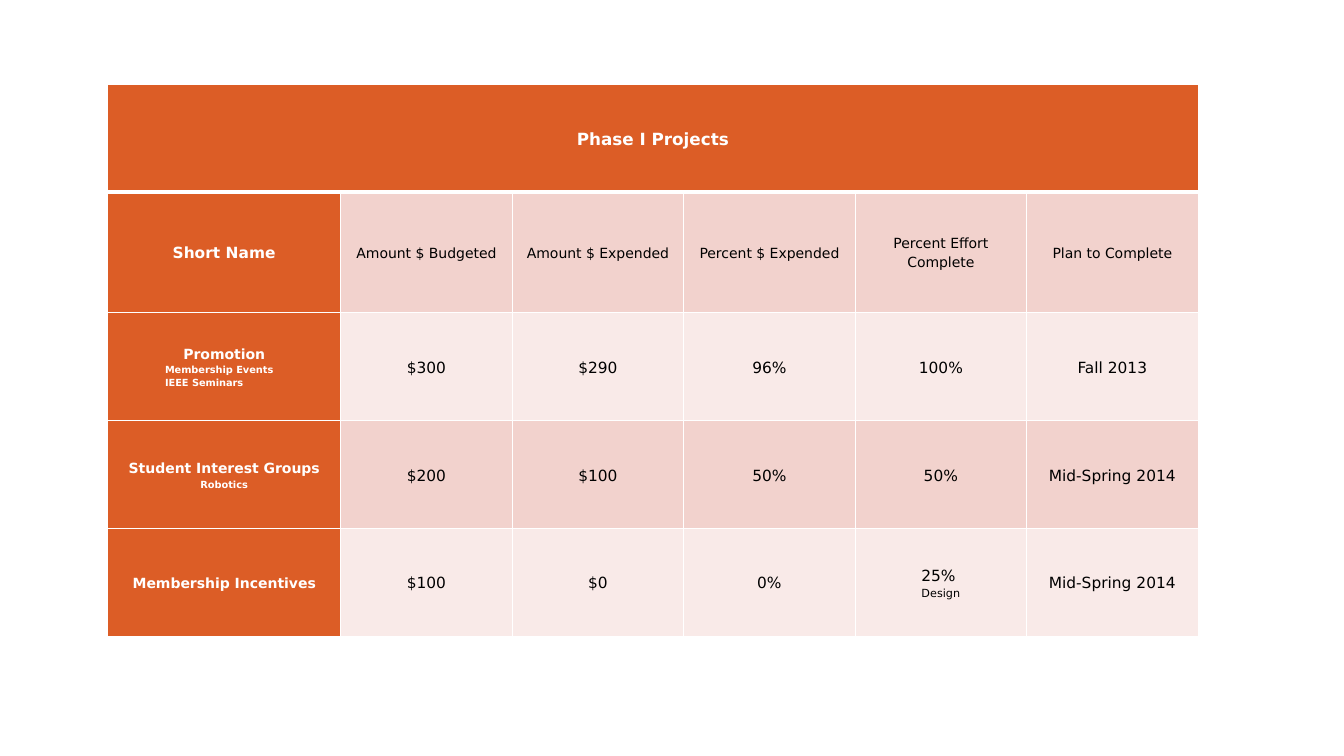
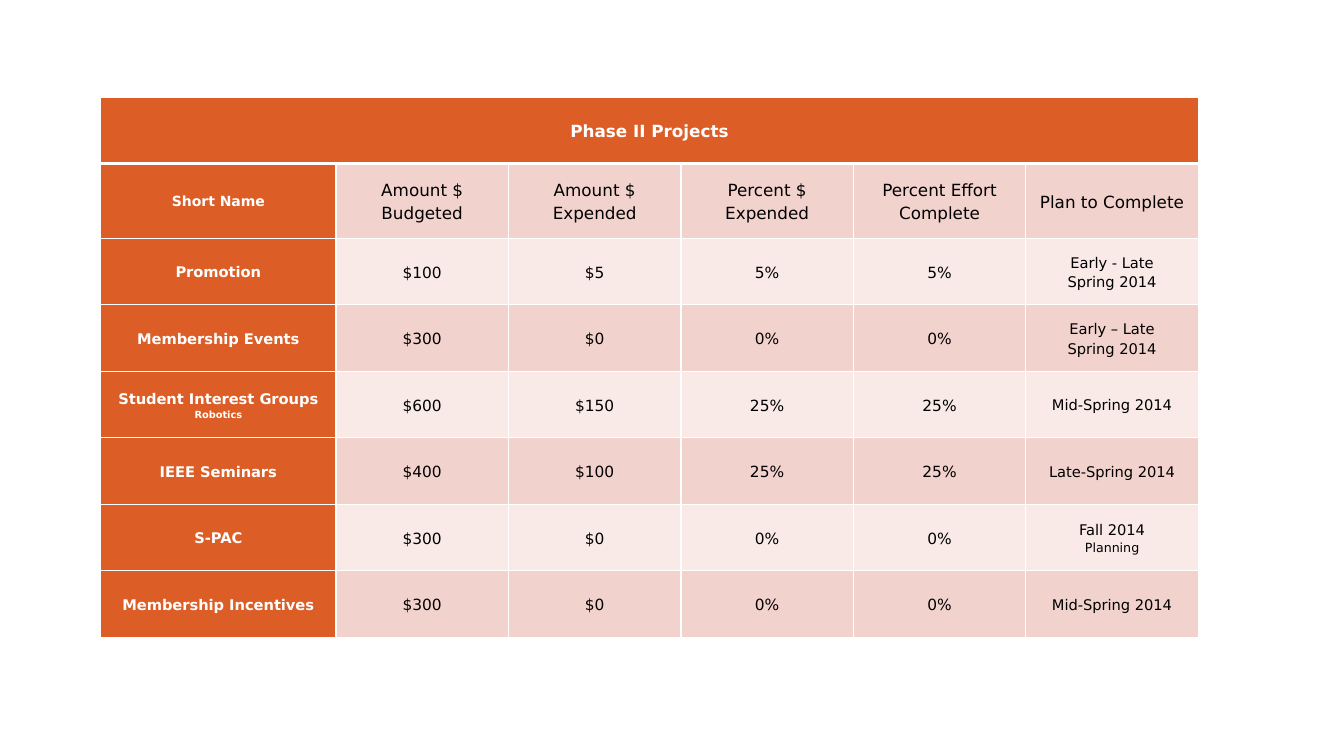
import dataclasses

import pptx
import pptx.dml.color
import pptx.enum.text
import pptx.oxml
import pptx.oxml.ns
import pptx.util

Pt = pptx.util.Pt
Align = pptx.enum.text.PP_ALIGN

COLORS = {
    "accent": "DC5D26",
    "dark_band": "F2D2CD",
    "light_band": "F9EAE8",
    "white": "FFFFFF",
    "black": "000000",
}
FONT = "DejaVu Sans"
LINE_SPACING = 1.15
CELL_INSET = 5
VALUE_SIZE = 11
TITLE_SIZE = 12
GRID_WIDTH = 1
TITLE_RULE_WIDTH = 3
HEADINGS = (
    "Short Name",
    "Amount $ Budgeted",
    "Amount $ Expended",
    "Percent $ Expended",
    "Percent Effort Complete",
    "Plan to Complete",
)


@dataclasses.dataclass(frozen=True)
class Line:
    text: str
    size: float | None = None
    indent: float = 0


Entry = str | tuple[Line, ...]


@dataclasses.dataclass(frozen=True)
class ProjectTable:
    title: str
    left: float
    top: float
    name_width: float
    value_width: float
    row_height: float
    heading_height: float
    corner_size: float
    heading_size: float
    name_size: float
    plan_size: float
    projects: tuple[tuple[Entry, ...], ...]


PHASES = (
    ProjectTable(
        title="Phase I Projects",
        left=76.9,
        top=60,
        name_width=166.5,
        value_width=122.5,
        row_height=77.1,
        heading_height=86.2,
        corner_size=11,
        heading_size=10,
        name_size=10,
        plan_size=11,
        projects=(
            (
                (
                    Line("Promotion"),
                    Line("Membership Events", 7, 36),
                    Line("IEEE Seminars", 7, 36),
                ),
                "$300", "$290", "96%", "100%", "Fall 2013",
            ),
            (
                (Line("Student Interest Groups"), Line("Robotics", 7)),
                "$200", "$100", "50%", "50%", "Mid-Spring 2014",
            ),
            (
                "Membership Incentives",
                "$100", "$0", "0%",
                (Line("25% "), Line("Design", 8)),
                "Mid-Spring 2014",
            ),
        ),
    ),
    ProjectTable(
        title="Phase II Projects",
        left=72,
        top=69.4,
        name_width=168,
        value_width=123.2,
        row_height=47.5,
        heading_height=53.4,
        corner_size=10,
        heading_size=12,
        name_size=10.5,
        plan_size=10.5,
        projects=(
            (
                "Promotion", "$100", "$5", "5%", "5%",
                (Line("Early - Late"), Line("Spring 2014")),
            ),
            (
                "Membership Events", "$300", "$0", "0%", "0%",
                (Line("Early – Late"), Line("Spring 2014")),
            ),
            (
                (Line("Student Interest Groups"), Line("Robotics", 7)),
                "$600", "$150", "25%", "25%", "Mid-Spring 2014",
            ),
            ("IEEE Seminars", "$400", "$100", "25%", "25%", "Late-Spring 2014"),
            (
                "S-PAC", "$300", "$0", "0%", "0%",
                (Line("Fall 2014"), Line("Planning", 9)),
            ),
            ("Membership Incentives", "$300", "$0", "0%", "0%", "Mid-Spring 2014"),
        ),
    ),
)


def rgb(name: str) -> pptx.dml.color.RGBColor:
    return pptx.dml.color.RGBColor.from_string(COLORS[name])


def write_text(paragraph, text: str, *, size: float, color: str, bold: bool,
               indent: float = 0) -> None:
    paragraph.alignment = Align.JUSTIFY if indent else Align.CENTER
    paragraph.line_spacing = LINE_SPACING
    if indent:
        paragraph._p.get_or_add_pPr().set("marL", str(Pt(indent)))
    span = paragraph.add_run()
    span.text = text
    span.font.name = FONT
    span.font.size = Pt(size)
    span.font.bold = bold
    span.font.color.rgb = rgb(color)


def draw_borders(cell, *, top: float, bottom: float) -> None:
    properties = cell._tc.get_or_add_tcPr()
    sides = {"L": GRID_WIDTH, "R": GRID_WIDTH, "T": top, "B": bottom}
    for side, width in sides.items():
        properties.append(pptx.oxml.parse_xml(
            f'<a:ln{side} {pptx.oxml.ns.nsdecls("a")} w="{Pt(width)}">'
            f'<a:solidFill><a:srgbClr val="{COLORS["white"]}"/></a:solidFill>'
            f'</a:ln{side}>'
        ))


def fill_cell(cell, entry: Entry, *, size: float, fill: str) -> None:
    cell.fill.solid()
    cell.fill.fore_color.rgb = rgb(fill)
    cell.vertical_anchor = pptx.enum.text.MSO_ANCHOR.MIDDLE
    cell.margin_left = cell.margin_right = Pt(CELL_INSET)
    cell.margin_top = cell.margin_bottom = Pt(0)
    on_accent = fill == "accent"
    lines = (Line(entry),) if isinstance(entry, str) else entry
    frame = cell.text_frame
    for index, line in enumerate(lines):
        paragraph = frame.add_paragraph() if index else frame.paragraphs[0]
        write_text(
            paragraph,
            line.text,
            size=line.size or size,
            color="white" if on_accent else "black",
            bold=on_accent,
            indent=line.indent,
        )


def entry_size(phase: ProjectTable, row: int, column: int) -> float:
    if row == 1:
        return phase.heading_size if column else phase.corner_size
    if column == 0:
        return phase.name_size
    return phase.plan_size if column == len(HEADINGS) - 1 else VALUE_SIZE


def draw_table(page, phase: ProjectTable) -> None:
    rows = (HEADINGS, *phase.projects)
    widths = [phase.name_width] + [phase.value_width] * (len(HEADINGS) - 1)
    heights = [phase.row_height, phase.heading_height]
    heights += [phase.row_height] * len(phase.projects)
    table = page.shapes.add_table(
        len(heights), len(widths), Pt(phase.left), Pt(phase.top),
        Pt(sum(widths)), Pt(sum(heights)),
    ).table
    table.horz_banding = False
    table.first_row = False
    for column, width in zip(table.columns, widths):
        column.width = Pt(width)
    for row, height in zip(table.rows, heights):
        row.height = Pt(height)

    for row in range(len(heights)):
        for column in range(len(widths)):
            draw_borders(
                table.cell(row, column),
                top=TITLE_RULE_WIDTH if row == 1 else GRID_WIDTH,
                bottom=TITLE_RULE_WIDTH if row == 0 else GRID_WIDTH,
            )

    title_cell = table.cell(0, 0)
    title_cell.merge(table.cell(0, len(widths) - 1))
    fill_cell(title_cell, phase.title, size=TITLE_SIZE, fill="accent")
    for row, entries in enumerate(rows, start=1):
        band = "dark_band" if row % 2 else "light_band"
        for column, entry in enumerate(entries):
            fill_cell(
                table.cell(row, column),
                entry,
                size=entry_size(phase, row, column),
                fill=band if column else "accent",
            )


def main() -> None:
    deck = pptx.Presentation()
    deck.slide_width = Pt(960)
    deck.slide_height = Pt(540)
    for phase in PHASES:
        page = deck.slides.add_slide(deck.slide_layouts[6])
        draw_table(page, phase)
    deck.save("out.pptx")


if __name__ == "__main__":
    main()
